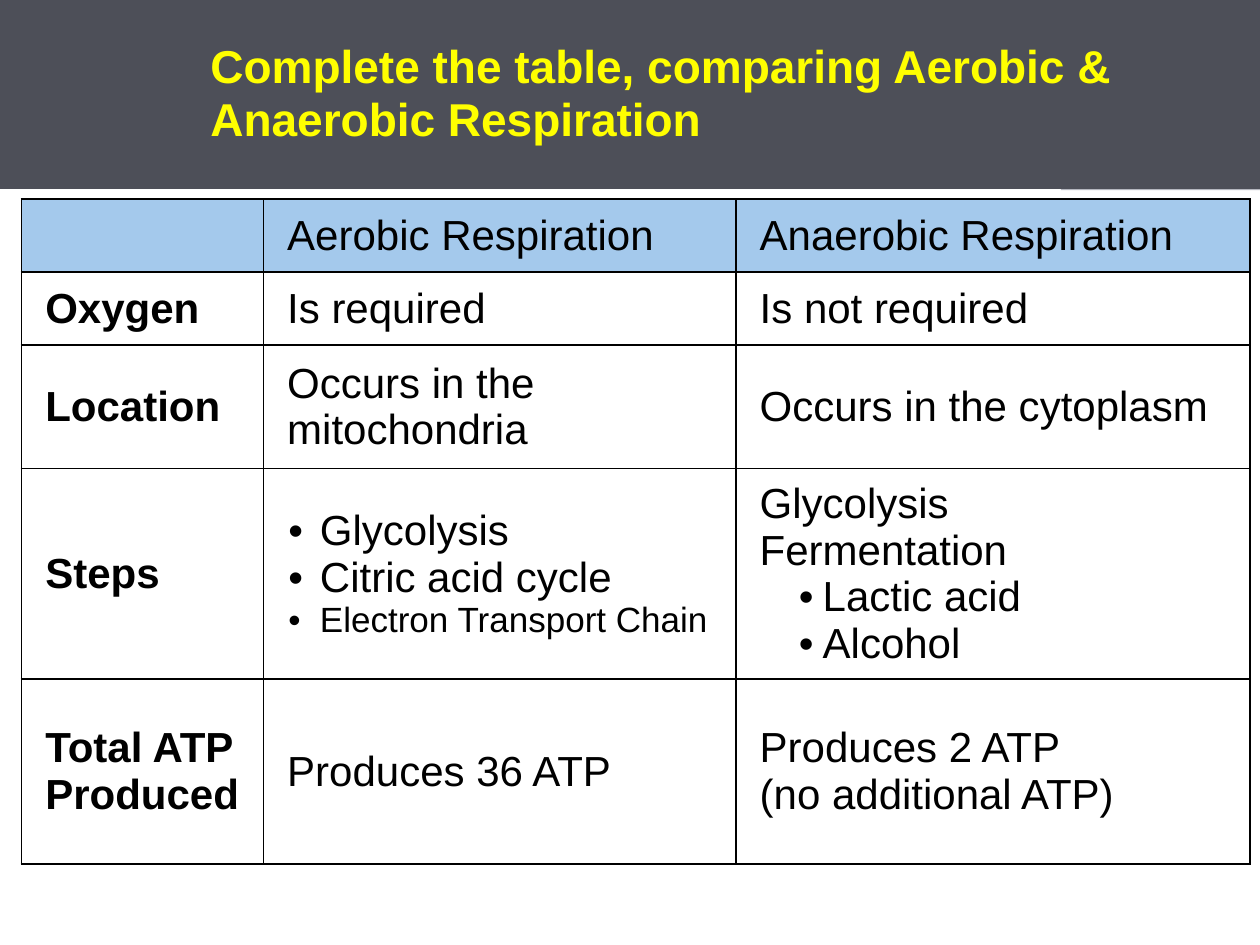
from lxml.etree import SubElement
from pptx import Presentation
from pptx.dml.color import RGBColor
from pptx.enum.shapes import MSO_SHAPE
from pptx.enum.text import MSO_ANCHOR, PP_ALIGN
from pptx.oxml.ns import qn
from pptx.util import Inches, Pt

COLORS = {"band": "4D4F58", "accent": "B5B7BF", "title": "FFFF00",
          "header": "A4C9EC", "text": "000000", "border": "000000"}


def rgb(name):
    return RGBColor.from_string(COLORS[name])


def write(p, text, size=24, color="text", bold=False, left=0, indent=0,
          bullet=None, spacing=None):
    """Fill one paragraph with formatted text."""
    p.alignment = PP_ALIGN.LEFT
    if spacing:
        p.line_spacing = spacing
    pPr = p._p.get_or_add_pPr()
    pPr.set("marL", str(Inches(left)))
    pPr.set("indent", str(Inches(indent)))
    if bullet:
        SubElement(pPr, qn("a:buFont"), typeface="Arial")
        SubElement(pPr, qn("a:buChar"), char=bullet)
    r = p.add_run()
    r.text = text
    r.font.name = "Arial"
    r.font.size = Pt(size)
    r.font.bold = bold
    r.font.color.rgb = rgb(color)


class SlideBuilder:
    def __init__(self, prs):
        self.slide = prs.slides.add_slide(prs.slide_layouts[6])

    def rect(self, x, y, w, h, fill):
        sp = self.slide.shapes.add_shape(
            MSO_SHAPE.RECTANGLE, Inches(x), Inches(y), Inches(w), Inches(h))
        sp.shadow.inherit = False
        sp.fill.solid()
        sp.fill.fore_color.rgb = rgb(fill)
        sp.line.fill.background()
        return sp

    def title(self, text, height):
        tf = self.rect(0, 0, 10, height, "band").text_frame
        tf.word_wrap = True
        tf.vertical_anchor = MSO_ANCHOR.MIDDLE
        tf.margin_left = tf.margin_right = Inches(0.17)
        tf.margin_top = tf.margin_bottom = Inches(0.07)
        write(tf.paragraphs[0], text, size=26.3, color="title", bold=True,
              left=1.5, spacing=0.95)

    def table(self, x, y, widths, heights, rows):
        table = self.slide.shapes.add_table(
            len(rows), len(widths), Inches(x), Inches(y),
            Inches(sum(widths)), Inches(sum(heights))).table
        for column, width in zip(table.columns, widths):
            column.width = Inches(width)
        for row, height in zip(table.rows, heights):
            row.height = Inches(height)
        for i, row in enumerate(rows):
            for j, lines in enumerate(row):
                self.cell(table.cell(i, j), lines, header=i == 0, label=j == 0)

    def cell(self, cell, lines, header, label):
        cell.vertical_anchor = MSO_ANCHOR.MIDDLE
        cell.margin_left = cell.margin_right = Inches(0.19)
        cell.margin_top = cell.margin_bottom = Inches(0.09)
        # Borders come before the fill in the cell properties
        tcPr = cell._tc.get_or_add_tcPr()
        for side in ("a:lnL", "a:lnR", "a:lnT", "a:lnB"):
            ln = SubElement(tcPr, qn(side), w=str(Pt(1)))
            fill = SubElement(ln, qn("a:solidFill"))
            SubElement(fill, qn("a:srgbClr"), val=COLORS["border"])
        if header:
            cell.fill.solid()
            cell.fill.fore_color.rgb = rgb("header")
        else:
            cell.fill.background()
        tf = cell.text_frame
        for n, line in enumerate(lines):
            text, style = line if isinstance(line, tuple) else (line, {})
            p = tf.add_paragraph() if n else tf.paragraphs[0]
            write(p, text, bold=label, **style)


BULLET = {"left": 0.26, "indent": -0.25, "bullet": "•"}
SUB_BULLET = {"left": 0.5, "indent": -0.19, "bullet": "•"}

ROWS = [
    [[], ["Aerobic Respiration"], ["Anaerobic Respiration"]],
    [["Oxygen"], ["Is required"], ["Is not required"]],
    [["Location"], ["Occurs in the mitochondria"], ["Occurs in the cytoplasm"]],
    [["Steps"],
     [("Glycolysis", BULLET), ("Citric acid cycle", BULLET),
      ("Electron Transport Chain", {**BULLET, "size": 20})],
     ["Glycolysis", "Fermentation",
      ("Lactic acid", SUB_BULLET), ("Alcohol", SUB_BULLET)]],
    [["Total ATP Produced"], ["Produces 36 ATP"],
     ["Produces 2 ATP", "(no additional ATP)"]],
]


def main():
    prs = Presentation()
    prs.slide_width, prs.slide_height = Inches(10), Inches(7.5)
    builder = SlideBuilder(prs)

    # Title band with its accent block behind
    builder.rect(8.42, 0, 1.58, 1.51, "accent")
    builder.title("Complete the table, comparing Aerobic & Anaerobic Respiration",
                  height=1.5)

    # Comparison table
    builder.table(0.17, 1.58, widths=[1.92, 3.75, 4.08],
                  heights=[0.58, 0.58, 0.98, 1.67, 1.47], rows=ROWS)

    prs.save("out.pptx")


if __name__ == "__main__":
    main()
